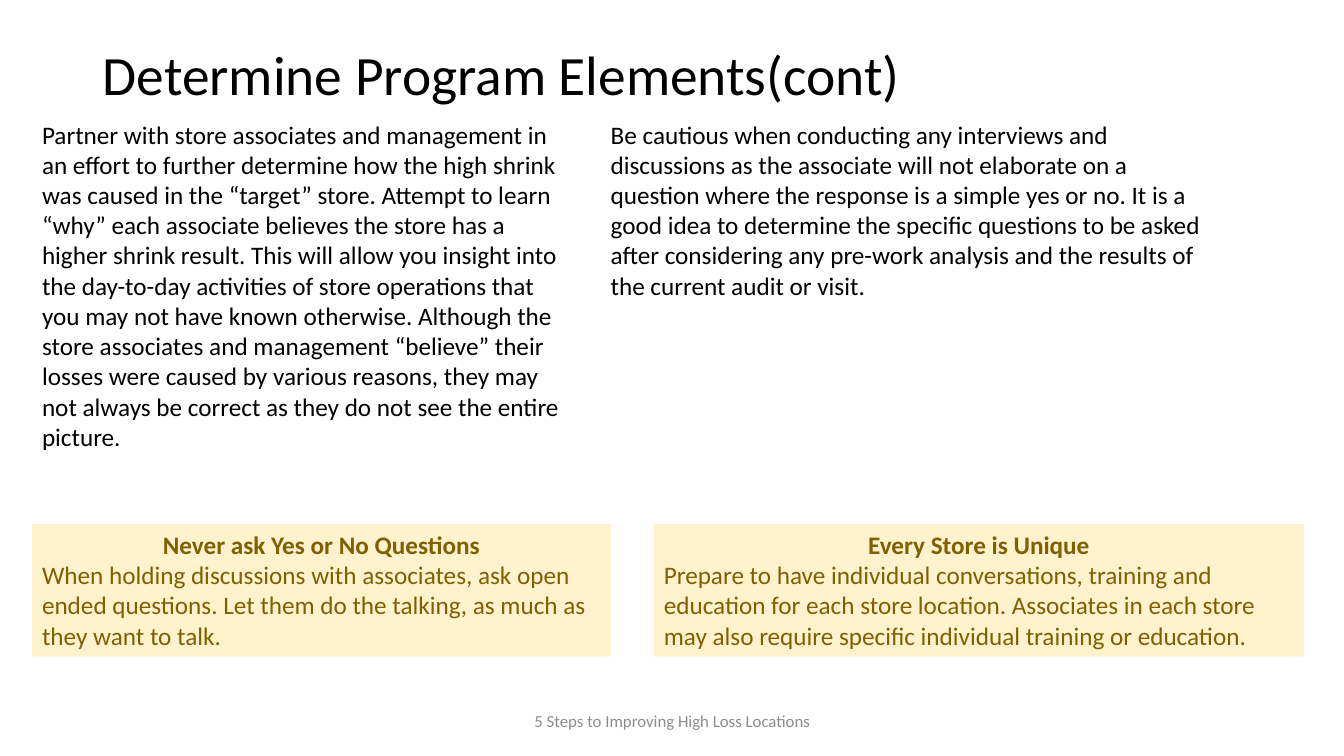
from dataclasses import dataclass

from pptx import Presentation
from pptx import util as u
from pptx.dml import color
from pptx.enum import shapes, text


@dataclass(frozen=True)
class Theme:
    font: str = "Calibri"
    ink: str = "000000"
    muted: str = "8C8C8C"
    tip_fill: str = "FFF2CC"
    tip_ink: str = "806000"
    title_size: float = 39.6
    body_size: float = 18
    footer_size: float = 12


class SlideWriter:
    def __init__(self, slide, theme):
        self.slide = slide
        self.theme = theme

    def style(self, paragraph, size, ink, align=text.PP_ALIGN.LEFT, bold=False):
        paragraph.alignment = align
        paragraph.font.name = self.theme.font
        paragraph.font.size = u.Pt(size)
        paragraph.font.bold = bold
        paragraph.font.color.rgb = color.RGBColor.from_string(ink)

    def text_box(self, box, words, size, ink, anchor=text.MSO_ANCHOR.TOP,
                 align=text.PP_ALIGN.LEFT):
        frame = self.slide.shapes.add_textbox(*map(u.Cm, box)).text_frame
        frame.word_wrap = True
        frame.vertical_anchor = anchor
        paragraph = frame.paragraphs[0]
        paragraph.text = words
        self.style(paragraph, size, ink, align)
        return paragraph

    def title(self, box, words):
        heading = self.text_box(box, words, self.theme.title_size, self.theme.ink,
                                text.MSO_ANCHOR.MIDDLE)
        heading.line_spacing = 0.9

    def body(self, box, words):
        self.text_box(box, words, self.theme.body_size, self.theme.ink)

    def footer(self, box, words):
        self.text_box(box, words, self.theme.footer_size, self.theme.muted,
                      text.MSO_ANCHOR.MIDDLE, text.PP_ALIGN.CENTER)

    def tip(self, box, heading, advice):
        panel = self.slide.shapes.add_shape(shapes.MSO_SHAPE.RECTANGLE, *map(u.Cm, box))
        panel.shadow.inherit = False
        panel.fill.solid()
        panel.fill.fore_color.rgb = color.RGBColor.from_string(self.theme.tip_fill)
        panel.line.fill.background()
        frame = panel.text_frame
        frame.word_wrap = True
        frame.vertical_anchor = text.MSO_ANCHOR.TOP
        frame.text = f"{heading}\n{advice}"
        top, rest = frame.paragraphs
        self.style(top, self.theme.body_size, self.theme.tip_ink,
                   text.PP_ALIGN.CENTER, bold=True)
        self.style(rest, self.theme.body_size, self.theme.tip_ink)


def main():
    deck = Presentation()
    deck.slide_width, deck.slide_height = u.Cm(33.87), u.Cm(19.05)
    writer = SlideWriter(deck.slides.add_slide(deck.slide_layouts[6]), Theme())

    left, body_top, tip_top, tip_height = 0.81, 2.87, 13.21, 3.33

    writer.title((2.34, 1.02, 21.18, 1.85), "Determine Program Elements(cont)")
    writer.footer((11.23, 17.65, 11.43, 1.02), "5 Steps to Improving High Loss Locations")
    writer.body(
        (left, body_top, 13.74, 8.71),
        "Partner with store associates and management in an effort to further determine "
        "how the high shrink was caused in the “target” store. Attempt to learn “why” each "
        "associate believes the store has a higher shrink result. This will allow you "
        "insight into the day-to-day activities of store operations that you may not have "
        "known otherwise. Although the store associates and management “believe” their "
        "losses were caused by various reasons, they may not always be correct as they do "
        "not see the entire picture.")
    writer.body(
        (15.14, body_top, 15.85, 4.88),
        "Be cautious when conducting any interviews and discussions as the associate will "
        "not elaborate on a question where the response is a simple yes or no. It is a good "
        "idea to determine the specific questions to be asked after considering any "
        "pre-work analysis and the results of the current audit or visit.")
    writer.tip(
        (left, tip_top, 14.58, tip_height),
        "Never ask Yes or No Questions",
        "When holding discussions with associates, ask open ended questions. Let them do "
        "the talking, as much as they want to talk.")
    writer.tip(
        (16.48, tip_top, 16.38, tip_height),
        "Every Store is Unique",
        "Prepare to have individual conversations, training and education for each store "
        "location. Associates in each store may also require specific individual training "
        "or education.")

    deck.save("out.pptx")


if __name__ == "__main__":
    main()
